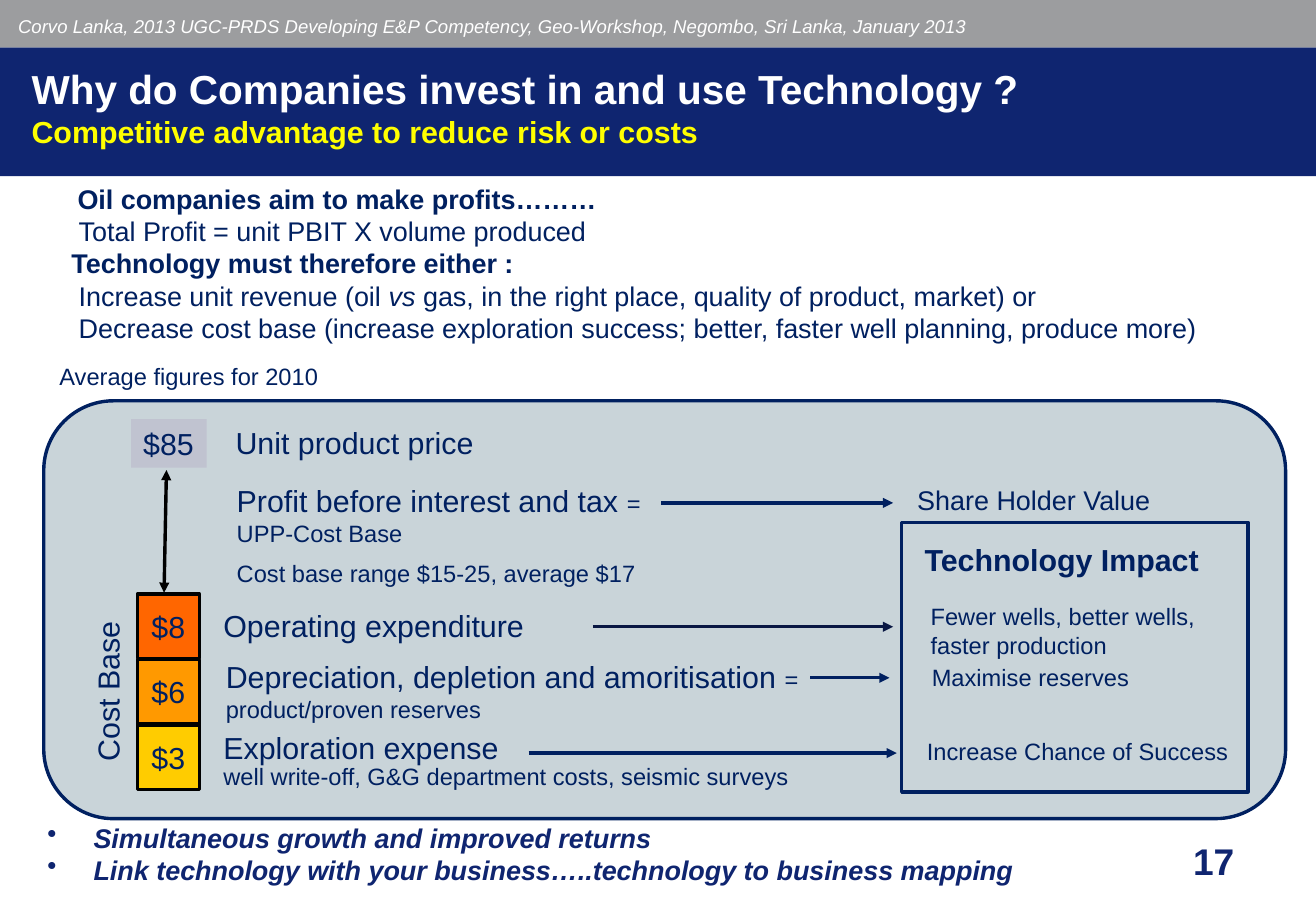
from lxml import etree
from pptx import Presentation
from pptx.dml.color import RGBColor
from pptx.enum.shapes import MSO_CONNECTOR, MSO_SHAPE
from pptx.enum.text import MSO_ANCHOR, PP_ALIGN
from pptx.oxml.ns import qn
from pptx.util import Pt

PX = 9144
FONT = "Arial"
RECT, ROUNDED = MSO_SHAPE.RECTANGLE, MSO_SHAPE.ROUNDED_RECTANGLE
STRAIGHT = MSO_CONNECTOR.STRAIGHT
TOP, MIDDLE = MSO_ANCHOR.TOP, MSO_ANCHOR.MIDDLE
LEFT, CENTER = PP_ALIGN.LEFT, PP_ALIGN.CENTER

NAVY = RGBColor(0x00, 0x20, 0x60)
BRAND_BLUE = RGBColor(0x0F, 0x25, 0x70)
DARK_NAVY = RGBColor(0x09, 0x17, 0x43)
GREY = RGBColor(0x9C, 0x9D, 0x9F)
PANEL = RGBColor(0xAD, 0xBE, 0xC6)
LILAC = RGBColor(0xC0, 0xC3, 0xD0)
ORANGE = RGBColor(0xFF, 0x66, 0x00)
AMBER = RGBColor(0xFF, 0x99, 0x00)
GOLD = RGBColor(0xFF, 0xCC, 0x00)
YELLOW = RGBColor(0xFF, 0xFF, 0x00)
WHITE = RGBColor(0xFF, 0xFF, 0xFF)
BLACK = RGBColor(0x00, 0x00, 0x00)

COSTS = [("$8", ORANGE), ("$6", AMBER), ("$3", GOLD)]
ARROWS = [
    (544, 735, 414, NAVY),
    (488, 735, 516, DARK_NAVY),
    (667, 732, 558, NAVY),
    (435, 738, 620, NAVY),
]
LABELS = [
    (39, 293, 275, 34, "Average figures for 2010", 14),
    (756, 491, 262, 57, "Fewer wells, better wells, faster production", 14),
    (757, 541, 244, 33, "Maximise reserves", 14),
    (753, 602, 270, 34, "Increase Chance of Success", 14),
    (745, 393, 241, 37, "Share Holder Value", 16),
    (184, 344, 260, 40, "Unit product price", 18),
    (174, 495, 312, 40, "Operating expenditure", 18),
]


def run(text, size, color=NAVY, bold=False, italic=False):
    return text, size, color, bold, italic


def box(x, y, w, h):
    return x * PX, y * PX, w * PX, h * PX


def write(tf, paragraphs, align=LEFT, anchor=TOP, gap=0, spacing=None):
    tf.word_wrap = True
    tf.vertical_anchor = anchor
    for i, runs in enumerate(paragraphs):
        p = tf.add_paragraph() if i else tf.paragraphs[0]
        p.alignment = align
        if i and gap:
            p.space_before = Pt(gap)
        if spacing:
            p.line_spacing = spacing
        for text, size, color, bold, italic in runs:
            r = p.add_run()
            r.text = text
            r.font.name = FONT
            r.font.size = Pt(size)
            r.font.color.rgb = color
            r.font.bold = bold
            r.font.italic = italic


def add_text(s, x, y, w, h, paragraphs, inset=True, **layout):
    sp = s.shapes.add_textbox(*box(x, y, w, h))
    tf = sp.text_frame
    if not inset:
        tf.margin_left = tf.margin_right = tf.margin_top = tf.margin_bottom = 0
    write(tf, paragraphs, **layout)
    return sp


def add_block(s, x, y, w, h, fill=None, line=None, shape=RECT):
    sp = s.shapes.add_shape(shape, *box(x, y, w, h))
    sp.shadow.inherit = False
    if fill is None:
        sp.fill.background()
    else:
        sp.fill.solid()
        sp.fill.fore_color.rgb = fill
    if line is None:
        sp.line.fill.background()
    else:
        sp.line.color.rgb = line
        sp.line.width = Pt(2)
    return sp


def add_arrow(s, x1, y1, x2, y2, color, ends=("tailEnd",)):
    cx = s.shapes.add_connector(STRAIGHT, x1 * PX, y1 * PX, x2 * PX, y2 * PX)
    cx.line.color.rgb = color
    cx.line.width = Pt(2)
    ln = cx.line._get_or_add_ln()
    for end in ends:
        etree.SubElement(ln, qn("a:" + end), type="triangle")
    etree.SubElement(cx._element.spPr, qn("a:effectLst"))


def indent(p, left, first=0, bullet=None):
    pPr = p._p.get_or_add_pPr()
    pPr.set("marL", str(left * PX))
    pPr.set("indent", str(first * PX))
    if bullet:
        etree.SubElement(pPr, qn("a:buChar"), char=bullet)


def add_header(s):
    add_block(s, 0, 39, 1083, 106, BRAND_BLUE)
    add_block(s, 0, 0, 1083, 39, GREY)
    add_text(s, 5, 7, 861, 31, [[run(
        "Corvo Lanka, 2013 UGC-PRDS Developing E&P Competency, Geo-Workshop, "
        "Negombo, Sri Lanka, January 2013", 11, WHITE, italic=True)]])
    add_text(s, 26, 38, 892, 100, [
        [run("Why do Companies invest in and use Technology ?", 24, WHITE, True)],
        [run("Competitive advantage to reduce risk or costs", 18, YELLOW, True)],
    ], inset=False, anchor=MIDDLE)


def add_intro(s):
    sp = add_text(s, 43, 145, 974, 145, [
        [run("Oil companies aim to make profits………", 16, bold=True)],
        [run("Total Profit = unit PBIT X volume produced", 16)],
        [run("Technology must therefore either :", 16, bold=True)],
        [run("Increase unit revenue (oil ", 16), run("vs", 16, italic=True),
         run(" gas, in the right place, quality of product, market) or", 16)],
        [run("Decrease cost base (increase exploration success; better, "
             "faster well planning, produce more)", 16)],
    ])
    for p, left in zip(sp.text_frame.paragraphs, (11, 12, 6, 12, 12)):
        indent(p, left)


def add_cost_stack(s):
    price = add_block(s, 108, 345, 62, 40, LILAC)
    write(price.text_frame, [[run("$85", 18)]])
    add_arrow(s, 135, 488, 137, 387, BLACK, ("headEnd", "tailEnd"))
    for i, (cost, fill) in enumerate(COSTS):
        sp = add_block(s, 113, 489 + 54 * i, 51, 53, fill, BLACK)
        write(sp.text_frame, [[run(cost, 18)]], CENTER, MIDDLE)
        sp.text_frame.word_wrap = False
    add_text(s, -27, 501, 231, 40, [[run("Cost Base", 18)]]).rotation = 270


def add_descriptions(s):
    for x, y, w, h, text, size in LABELS:
        add_text(s, x, y, w, h, [[run(text, size)]])
    add_text(s, 751, 441, 261, 40, [[run("Technology Impact", 18, bold=True)]])
    add_text(s, 185, 392, 377, 99, [
        [run("Profit before interest and tax ", 18), run("= UPP-Cost Base", 14)],
        [run("Cost base range $15-25, average $17", 14)],
    ], gap=7)
    add_text(s, 176, 537, 520, 63, [
        [run("Depreciation, depletion and amoritisation ", 18),
         run("= product/proven reserves", 14)],
    ])
    add_text(s, 174, 608, 656, 50, [
        [run("Exploration expense", 18)],
        [run("well write-off, G&G department costs, seismic surveys", 14)],
    ], gap=7, spacing=0.5)


def add_footer(s):
    sp = add_text(s, 39, 676, 842, 74, [
        [run(text, 16, BRAND_BLUE, True, True)] for text in (
            "Simultaneous growth and improved returns",
            "Link technology with your business…..technology to business mapping")
    ], inset=False)
    for p in sp.text_frame.paragraphs:
        indent(p, 38, -38, "•")
    add_text(s, 972, 685, 72, 47, [[run("17", 22, BRAND_BLUE, True)]])


def main():
    prs = Presentation()
    prs.slide_width, prs.slide_height = 1083 * PX, 750 * PX
    s = prs.slides.add_slide(prs.slide_layouts[6])
    add_header(s)
    panel = add_block(s, 36, 330, 1022, 344, PANEL, NAVY, ROUNDED)
    color = panel._element.spPr.find(qn("a:solidFill"))[0]
    etree.SubElement(color, qn("a:alpha"), val="65000")
    add_intro(s)
    add_cost_stack(s)
    add_block(s, 742, 430, 285, 222, line=NAVY)
    add_descriptions(s)
    for x1, x2, y, line in ARROWS:
        add_arrow(s, x1, y, x2, y, line)
    add_footer(s)
    prs.save("out.pptx")


if __name__ == "__main__":
    main()
